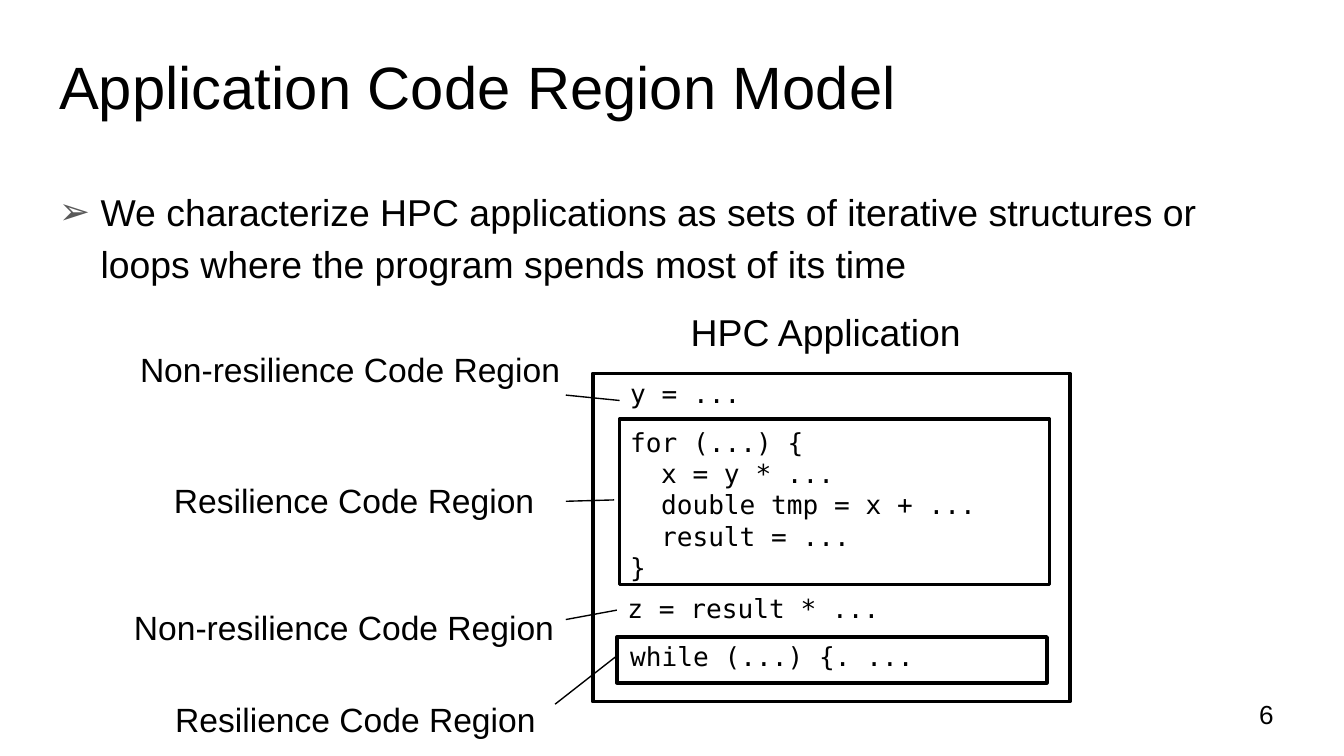
from lxml.etree import SubElement
from pptx import Presentation
from pptx.dml.color import RGBColor
from pptx.enum.shapes import MSO_CONNECTOR, MSO_SHAPE
from pptx.enum.text import MSO_ANCHOR as Anchor, MSO_AUTO_SIZE as AutoSize, PP_ALIGN as Align
from pptx.oxml.ns import qn
from pptx.util import Emu, Pt

PX = 9144  # 100 px to the inch
SANS, MONO = "Arial", "DejaVu Sans Mono"
BLACK, WHITE, GRAY = "000000", "FFFFFF", "595959"
CODE_INDENT = 23  # two characters of 14 pt code


def px(value):
    return Emu(value * PX)


def color(hex_string):
    return RGBColor.from_string(hex_string)


def place(shape, box):
    shape.left, shape.top, shape.width, shape.height = map(px, box)


def fill_text(shape, lines, size, font=SANS, align=Align.LEFT, anchor=Anchor.TOP, inset=5):
    frame = shape.text_frame
    frame.text = "\n".join(lines)
    frame.word_wrap = True
    frame.auto_size = AutoSize.NONE
    frame.vertical_anchor = anchor
    frame.margin_left = frame.margin_right = px(10)
    frame.margin_top = frame.margin_bottom = px(inset)
    for paragraph in frame.paragraphs:
        paragraph.alignment = align
        for run in paragraph.runs:
            run.font.name = font
            run.font.size = Pt(size)
            run.font.color.rgb = color(BLACK)


def add_text(slide, box, lines, size, **style):
    shape = slide.shapes.add_textbox(*map(px, box))
    fill_text(shape, lines, size, **style)
    return shape


def indent(paragraph, left, first=0):
    properties = paragraph._p.get_or_add_pPr()
    properties.set("marL", str(px(left)))
    properties.set("indent", str(px(first)))
    return properties


def add_bullet(paragraph, symbol):
    paragraph.line_spacing = 1.15
    paragraph.space_after = Pt(16)
    properties = indent(paragraph, 31, -31)
    bullet_color = SubElement(properties, qn("a:buClr"))
    SubElement(bullet_color, qn("a:srgbClr"), val=GRAY)
    SubElement(properties, qn("a:buFont"), typeface=SANS)
    SubElement(properties, qn("a:buChar"), char=symbol)


def add_frame(slide, box, fill=None):
    shape = slide.shapes.add_shape(MSO_SHAPE.RECTANGLE, *map(px, box))
    shape.shadow.inherit = False
    if fill:
        shape.fill.solid()
        shape.fill.fore_color.rgb = color(fill)
    else:
        shape.fill.background()
    shape.line.color.rgb = color(BLACK)
    shape.line.width = Pt(2)


def add_line(slide, ends):
    line = slide.shapes.add_connector(MSO_CONNECTOR.STRAIGHT, *map(px, ends))
    line.line.color.rgb = color(BLACK)
    line.line.width = Pt(0.75)
    SubElement(line._element.spPr, qn("a:effectLst"))


def main():
    presentation = Presentation()
    presentation.slide_width = px(1000)
    presentation.slide_height = px(1000) * 9 // 16
    slide = presentation.slides.add_slide(presentation.slide_layouts[5])

    # Title, statement and slide number
    title = slide.shapes.title
    place(title, (34, 27, 932, 63))
    fill_text(title, ["Application Code Region Model"], 32, inset=10)
    statement = add_text(slide, (34, 126, 932, 374), [
        "We characterize HPC applications as sets of iterative structures or "
        "loops where the program spends most of its time"], 20, inset=10)
    add_bullet(statement.text_frame.paragraphs[0], "➢")
    add_text(slide, (927, 510, 60, 43), ["6"], 14, anchor=Anchor.MIDDLE, inset=10)

    # Application frame with its code
    add_frame(slide, (441, 278, 355, 244), WHITE)
    add_text(slide, (504, 225, 257, 77), ["HPC Application"], 20)
    loop = add_text(slide, (459, 312, 321, 128), [
        "for (...) {", "x = y * ...", "double tmp = x + ...", "result = ...", "}"], 14, font=MONO)
    for paragraph in loop.text_frame.paragraphs[1:-1]:
        indent(paragraph, CODE_INDENT)
    add_text(slide, (459, 276, 321, 34), ["y = ..."], 14, font=MONO)
    add_text(slide, (457, 436, 324, 34), ["z = result * ..."], 14, font=MONO)
    add_text(slide, (459, 470, 321, 36), ["while (...) {. ..."], 14, font=MONO, anchor=Anchor.MIDDLE)

    # Region labels, each with a line to its code
    regions = [
        ("Non-resilience", (80, 255, 361, 40), (461, 298, 421, 294)),
        ("Resilience", (83, 352, 361, 40), (457, 372, 421, 373)),
        ("Non-resilience", (74, 447, 364, 40), (459, 454, 421, 461)),
        ("Resilience", (83, 515, 363, 40), (459, 488, 413, 524)),
    ]
    for kind, box, ends in regions:
        add_text(slide, box, [f"{kind} Code Region"], 18, align=Align.CENTER)
        add_line(slide, ends)

    # Frames around the resilience regions
    add_frame(slide, (461, 312, 320, 123))
    add_frame(slide, (459, 474, 320, 34))

    presentation.save("out.pptx")


if __name__ == "__main__":
    main()
